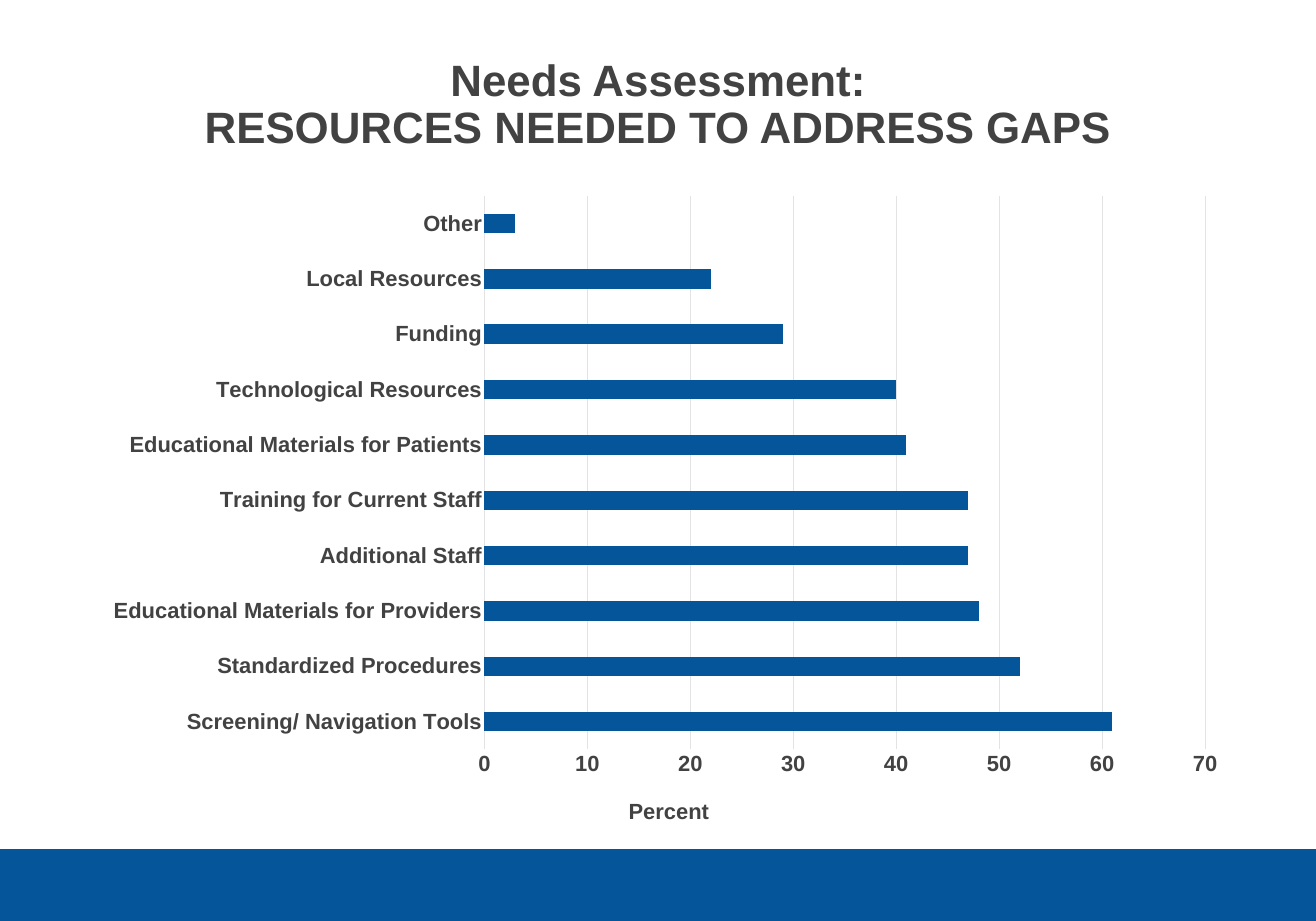
from pptx import Presentation
from pptx.chart.data import CategoryChartData
from pptx.dml.color import RGBColor
from pptx.enum.chart import XL_CHART_TYPE as Kind, XL_TICK_MARK as Tick
from pptx.enum.shapes import MSO_SHAPE as Shape
from pptx.enum.text import MSO_ANCHOR as Anchor, MSO_AUTO_SIZE as Fit, PP_ALIGN as Align
from pptx.oxml import parse_xml
from pptx.oxml.ns import nsdecls, qn
from pptx.util import Cm, Pt

BLUE = RGBColor(0x05, 0x55, 0x9A)
GREY = RGBColor(0x42, 0x42, 0x42)
PALE = RGBColor(0xE3, 0xE3, 0xE3)
FACE = "Arial"
WIDE, HIGH = Cm(50.8), Cm(35.56)

NEEDS = {
    "Screening/ Navigation Tools": 61,
    "Standardized Procedures": 52,
    "Educational Materials for Providers": 48,
    "Additional Staff": 47,
    "Training for Current Staff": 47,
    "Educational Materials for Patients": 41,
    "Technological Resources": 40,
    "Funding": 29,
    "Local Resources": 22,
    "Other": 3,
}


def style(font, size):
    """Make a font bold grey Arial of the given size."""
    font.name, font.size, font.bold = FACE, Pt(size), True
    font.color.rgb = GREY


def rule(line):
    """Draw a thin pale line."""
    line.color.rgb = PALE
    line.width = Pt(0.75)


def place(node, index, target="", **spots):
    """Give a chart part a fixed place, as shares of the chart."""
    old = node.find(qn("c:layout"))
    if old is not None:
        node.remove(old)
    modes = "".join(f'<c:{key}Mode val="edge"/>' for key in "xy")
    sizes = "".join(f'<c:{key} val="{val}"/>' for key, val in spots.items())
    node.insert(index, parse_xml(
        f'<c:layout {nsdecls("c")}><c:manualLayout>{target}{modes}{sizes}'
        "</c:manualLayout></c:layout>"))


def add_band(slide):
    """Add the blue band at the foot."""
    top = Cm(32.79)
    band = slide.shapes.add_shape(Shape.RECTANGLE, 0, top, WIDE, HIGH - top)
    band.shadow.inherit = False
    band.fill.solid()
    band.fill.fore_color.rgb = BLUE
    band.line.fill.background()


def add_title(slide, first, second):
    """Fill the title with two centred lines."""
    title = slide.shapes.title
    title.left, title.top = Cm(3.5), Cm(1.9)
    title.width, title.height = Cm(43.8), Cm(4.14)
    frame = title.text_frame
    frame.word_wrap, frame.auto_size = True, Fit.NONE
    frame.vertical_anchor = Anchor.BOTTOM
    para = frame.paragraphs[0]
    para.add_run().text = first
    para.add_line_break()
    para.add_run().text = second
    para.alignment, para.line_spacing = Align.CENTER, 0.9
    style(para.font, 48)


def style_axis(axis):
    """Set the label font and drop the tick marks."""
    axis.major_tick_mark = axis.minor_tick_mark = Tick.NONE
    style(axis.tick_labels.font, 24)


def add_bars(slide, needs):
    """Add the bar chart of needs in percent."""
    data = CategoryChartData()
    data.categories = list(needs)
    data.add_series("Series 1", list(needs.values()))
    chart = slide.shapes.add_chart(
        Kind.BAR_CLUSTERED, Cm(3.48), Cm(7.06), Cm(44.37), Cm(25.32), data).chart
    chart.has_legend = chart.has_title = False
    chart.font.name, chart.font.size = FACE, Pt(10)
    chart.font.color.rgb = GREY

    plot = chart.plots[0]
    plot.gap_width, plot.vary_by_categories = 182, False
    fill = plot.series[0].format.fill
    fill.solid()
    fill.fore_color.rgb = BLUE

    cats, vals = chart.category_axis, chart.value_axis
    style_axis(cats)
    rule(cats.format.line)
    style_axis(vals)
    vals.format.line.fill.background()
    vals.minimum_scale, vals.maximum_scale, vals.major_unit = 0, 70, 10
    vals.has_major_gridlines = True
    rule(vals.major_gridlines.format.line)

    name = vals.axis_title
    para = name.text_frame.paragraphs[0]
    para.text = "Percent"
    style(para.font, 24)
    place(name.element, 1, x=0.465, y=0.93)
    area = chart.element.xpath(".//c:plotArea")[0]
    place(area, 0, '<c:layoutTarget val="inner"/>', x=0.343, y=0.02, w=0.627, h=0.844)


def main():
    """Build and save the slide."""
    deck = Presentation()
    deck.slide_width, deck.slide_height = WIDE, HIGH
    slide = deck.slides.add_slide(deck.slide_layouts[5])
    add_band(slide)
    add_title(slide, "Needs Assessment:", "RESOURCES NEEDED TO ADDRESS GAPS")
    add_bars(slide, NEEDS)
    deck.save("out.pptx")


if __name__ == "__main__":
    main()
